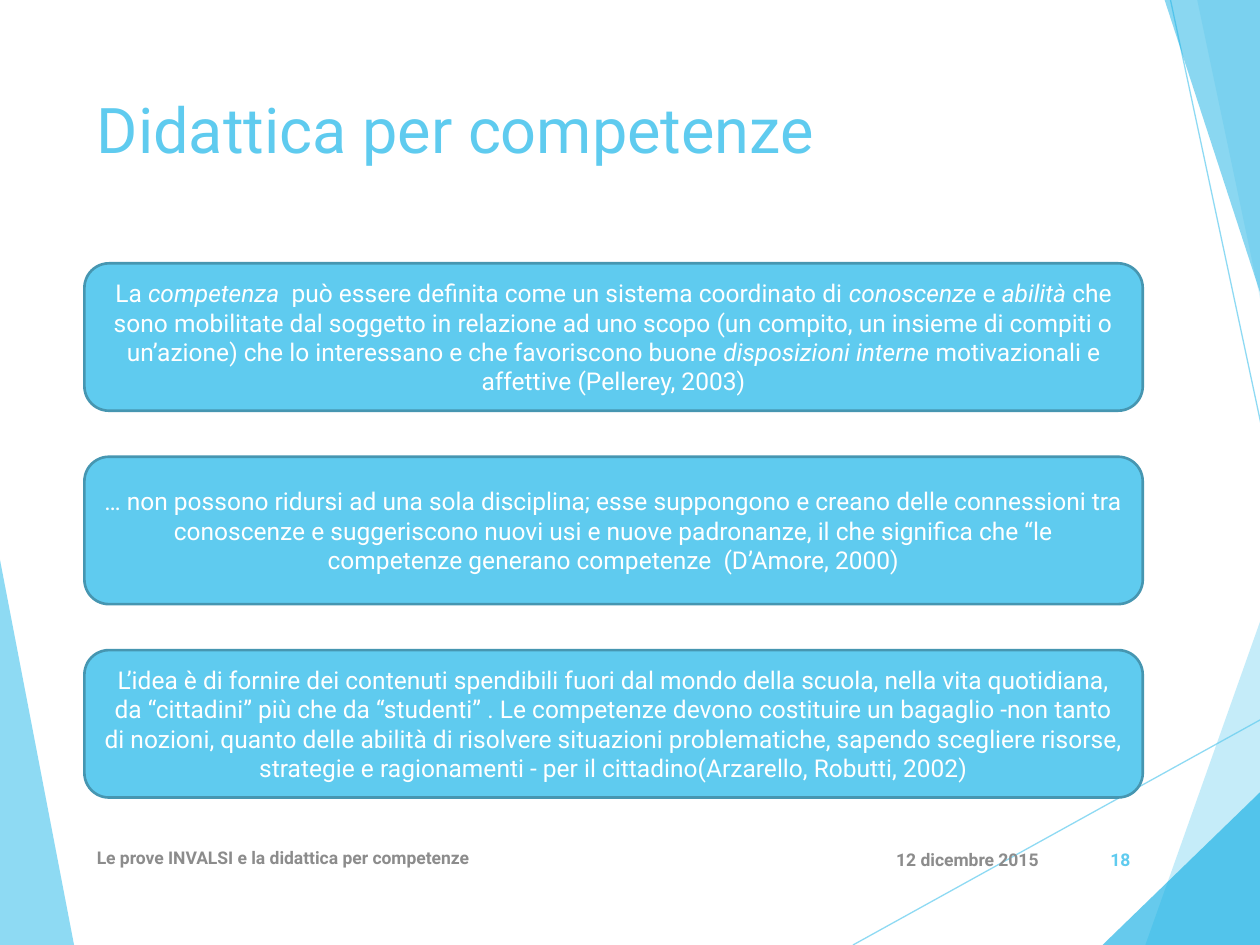
from lxml import etree
from pptx import Presentation, util as u
from pptx.dml.color import RGBColor
from pptx.enum import shapes, text
from pptx.oxml.ns import qn

Inches = u.Inches
COLORS = {"sky": "5FCBEF", "deep": "17B0E4", "edge": "4696B1", "grey": "8C8C8C", "white": "FFFFFF"}


def paint(fill, color, opacity=100):
    """Make a fill solid, with its opacity in percent."""
    fill.solid()
    fill.fore_color.rgb = RGBColor.from_string(COLORS[color])
    if opacity < 100:
        solid = fill._xPr.find(qn("a:solidFill"))
        etree.SubElement(solid[0], qn("a:alpha"), val=str(opacity * 1000))


def write(shape, wording, color, align, anchor, **font):
    """Fill a shape with one paragraph; parts between asterisks are italic."""
    frame = shape.text_frame
    frame.word_wrap = True
    frame.vertical_anchor = anchor
    para = frame.paragraphs[0]
    para.alignment = align
    for index, part in enumerate(wording.split("*")):
        span = para.add_run()
        span.text = part
        span.font.color.rgb = RGBColor.from_string(COLORS[color])
        for name, value in {"name": "Roboto", "italic": index % 2 == 1, **font}.items():
            setattr(span.font, name, value)


deck = Presentation()
deck.slide_width, deck.slide_height = Inches(10), Inches(7.5)
page = deck.slides.add_slide(deck.slide_layouts[6])

# Decoration: translucent facets, with two thin lines above the left one
left_facet = ("sky", 70, [(-0.01, 4.39), (0.59, 7.51), (-0.01, 7.5)])
right_facets = [
    ("sky", 36, [(11.75, 0), (9.09, 7.5), (12.08, 7.51), (12.07, 0.01)]),
    ("sky", 20, [(9.5, -0.01), (11.08, 7.5), (12.07, 7.5), (12.07, -0.01)]),
    ("deep", 66, [(8.75, 7.5), (12.06, 4.29), (12.07, 7.5)]),
    ("deep", 50, [(9.24, -0.01), (11.69, 7.5), (12.07, 7.49), (12.07, -0.01)]),
]
for color, opacity, points in [left_facet, *right_facets]:
    corners = [(Inches(x), Inches(y)) for x, y in points]
    builder = page.shapes.build_freeform(*corners[0])
    builder.add_line_segments(corners[1:], close=True)
    facet = builder.convert_to_shape()
    facet.shadow.inherit = False
    paint(facet.fill, color, opacity)
    facet.line.fill.background()

    if points is left_facet[2]:
        for ends in [(6.77, 7.5, 12.07, 4.57), (9.29, 0, 10.89, 7.5)]:
            line = page.shapes.add_connector(
                shapes.MSO_CONNECTOR.STRAIGHT, *(Inches(value) for value in ends))
            line.line.width = u.Pt(0.75)
            paint(line.line.fill, "sky", 70)
            etree.SubElement(line._element.spPr, qn("a:effectLst"))

# Title and footer
LEFT, RIGHT = text.PP_ALIGN.LEFT, text.PP_ALIGN.RIGHT
TOP, MIDDLE = text.MSO_ANCHOR.TOP, text.MSO_ANCHOR.MIDDLE
labels = [
    ("Didattica per competenze", (0.67, 0.67, 8.4, 1.44), "sky", LEFT, TOP, 36, False),
    ("12 dicembre 2015", (6.91, 6.62, 1.43, 0.4), "grey", RIGHT, MIDDLE, 10, True),
    ("Le prove INVALSI e la didattica per competenze", (0.67, 6.61, 6.1, 0.4),
     "grey", LEFT, MIDDLE, 10, True),
    ("18", (8.51, 6.62, 0.56, 0.4), "sky", RIGHT, MIDDLE, 10, True),
]
for wording, place, color, align, anchor, size, bold in labels:
    label = page.shapes.add_textbox(*(Inches(value) for value in place))
    write(label, wording, color, align, anchor, size=u.Pt(size), bold=bold)

# Three evenly spaced statements
statements = [
    "La *competenza * può essere definita come un sistema coordinato di *conoscenze *e *abilità *"
    "che sono mobilitate dal soggetto in relazione ad uno scopo (un compito, un insieme di compiti "
    "o un’azione) che lo interessano e che favoriscono buone *disposizioni interne *motivazionali "
    "e affettive (Pellerey, 2003)",
    "… non possono ridursi ad una sola disciplina; esse suppongono e creano delle connessioni tra "
    "conoscenze e suggeriscono nuovi usi e nuove padronanze, il che significa che “le competenze "
    "generano competenze  (D’Amore, 2000)",
    "L’idea è di fornire dei contenuti spendibili fuori dal mondo della scuola, nella vita "
    "quotidiana, da “cittadini” più che da “studenti” . Le competenze devono costituire un bagaglio "
    "-non tanto di nozioni, quanto delle abilità di risolvere situazioni problematiche, sapendo "
    "scegliere risorse, strategie e ragionamenti - per il cittadino(Arzarello, Robutti, 2002)",
]
first_top, last_top = 2.09, 5.16
pitch = (last_top - first_top) / (len(statements) - 1)
for row, statement in enumerate(statements):
    box = page.shapes.add_shape(
        shapes.MSO_SHAPE.ROUNDED_RECTANGLE,
        Inches(0.67), Inches(first_top + row * pitch), Inches(8.4), Inches(1.17))
    box.shadow.inherit = False
    paint(box.fill, "sky")
    paint(box.line.fill, "edge")
    box.line.width = u.Pt(1.5)
    write(box, statement, "white", text.PP_ALIGN.CENTER, MIDDLE, size=u.Pt(14))

deck.save("out.pptx")
